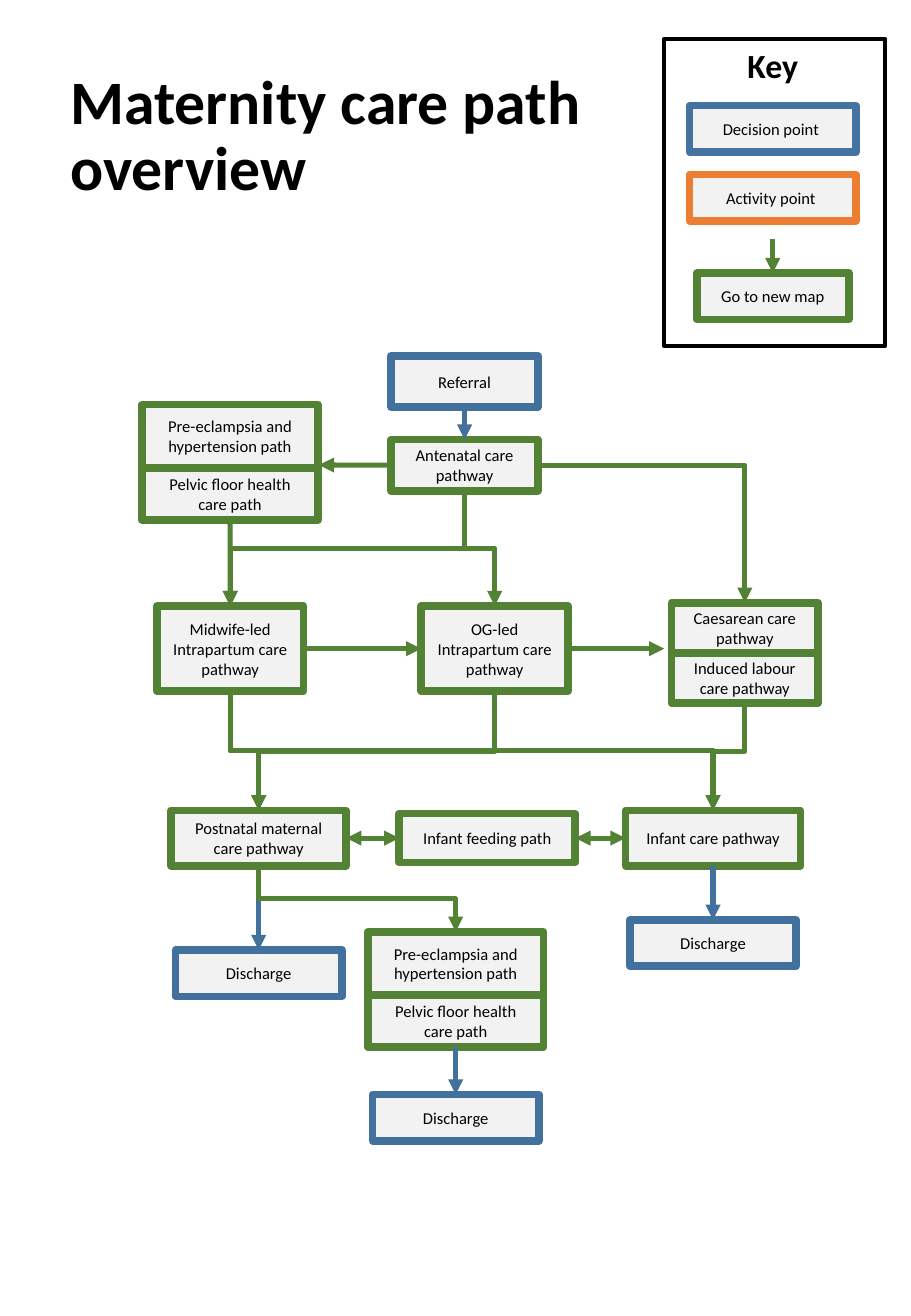
from lxml.etree import SubElement
from pptx import Presentation
from pptx.dml.color import RGBColor
from pptx.enum.shapes import MSO_CONNECTOR, MSO_SHAPE
from pptx.enum.text import MSO_ANCHOR, MSO_AUTO_SIZE, PP_ALIGN
from pptx.oxml.ns import qn
from pptx.util import Cm, Pt

COLOURS = {"decision": "41719C", "key decision": "43739E", "activity": "ED7D31",
           "map": "548235", "fill": "F2F2F2", "ink": "000000"}
TOP, LEFT, BOTTOM, RIGHT = range(4)
HYPERTENSION = "Pre-eclampsia and hypertension path"
PELVIC = "Pelvic floor health care path"

STEPS = {
    "referral": ("Referral", "decision", 5.21, 0, 3.07, 1.07),
    "antenatal": ("Antenatal care pathway", "map", 5.21, 1.75, 3.07, 1.07),
    "hypertension": (HYPERTENSION, "map", 0, 1.02, 3.68, 1.32),
    "pelvic": (PELVIC, "map", 0, 2.34, 3.68, 1.09),
    "midwife": ("Midwife-led Intrapartum care pathway", "map", 0.31, 5.23, 3.07, 1.78),
    "og": ("OG-led Intrapartum care pathway", "map", 5.84, 5.23, 3.07, 1.78),
    "caesarean": ("Caesarean care pathway", "map", 11.07, 5.16, 3.07, 1.05),
    "induced": ("Induced labour care pathway", "map", 11.07, 6.21, 3.07, 1.05),
    "postnatal": ("Postnatal maternal care pathway", "map", 0.61, 9.5, 3.66, 1.16),
    "feeding": ("Infant feeding path", "map", 5.38, 9.57, 3.68, 1.02),
    "infant": ("Infant care pathway", "map", 10.11, 9.5, 3.66, 1.16),
    "late hypertension": (HYPERTENSION, "map", 4.72, 12.04, 3.68, 1.32),
    "late pelvic": (PELVIC, "map", 4.72, 13.36, 3.68, 1.09),
    "infant discharge": ("Discharge", "decision", 10.2, 11.79, 3.48, 0.97),
    "mother discharge": ("Discharge", "decision", 0.7, 12.42, 3.48, 0.97),
    "late discharge": ("Discharge", "decision", 4.82, 15.44, 3.48, 0.97),
}
DOWN_ARROWS = [
    ("referral", "antenatal", "decision"),
    ("infant", "infant discharge", "decision"),
    ("postnatal", "mother discharge", "decision"),
    ("late pelvic", "late discharge", "decision"),
    ("pelvic", "midwife", "map"),
]
DOWN_ELBOWS = [
    ("antenatal", "midwife", 0.5), ("antenatal", "og", 0.5),
    ("midwife", "infant", 0.5), ("midwife", "postnatal", 0.5),
    ("og", "postnatal", 0.51), ("induced", "infant", 0.45),
    ("postnatal", "late hypertension", 0.5),
]


def rgb(name):
    """Return the named colour."""
    return RGBColor.from_string(COLOURS[name])


def format_text(tf, size, bold=False, align=PP_ALIGN.CENTER):
    """Style every run of a text frame."""
    for p in tf.paragraphs:
        p.alignment = align
        for r in p.runs:
            r.font.name, r.font.size, r.font.bold = "Calibri", Pt(size), bold
            r.font.color.rgb = rgb("ink")


def add_box(slide, origin, text, colour, x, y, w, h):
    """Add a bordered step, placed in cm from the origin."""
    sp = slide.shapes.add_shape(MSO_SHAPE.RECTANGLE, Cm(origin[0] + x),
                                Cm(origin[1] + y), Cm(w), Cm(h))
    sp.shadow.inherit = False
    sp.fill.solid()
    sp.fill.fore_color.rgb = rgb("fill")
    sp.line.color.rgb = rgb(colour)
    sp.line.width = Pt(4.5)
    tf = sp.text_frame
    tf.text = text
    tf.word_wrap = True
    tf.vertical_anchor = MSO_ANCHOR.MIDDLE
    format_text(tf, 9.8)
    return sp


def add_arrow(slide, ends=(0, 0, 0, 0), colour="map", kind=MSO_CONNECTOR.STRAIGHT,
              double=False):
    """Add an arrow between two points given in cm."""
    c = slide.shapes.add_connector(kind, *(Cm(v) for v in ends))
    c.line.color.rgb = rgb(colour)
    c.line.width = Pt(3)
    ln = c.line._get_or_add_ln()
    for tag in ("a:headEnd", "a:tailEnd") if double else ("a:tailEnd",):
        SubElement(ln, qn(tag), type="triangle")
    SubElement(c.element.spPr, qn("a:effectLst"))
    return c


def join(slide, start, start_site, end, end_site, **style):
    """Glue an arrow to two steps."""
    c = add_arrow(slide, **style)
    c.begin_connect(start, start_site)
    c.end_connect(end, end_site)
    return c


def join_down(slide, start, end, bend):
    """Glue an elbow that leaves downwards and turns at the given share of its drop."""
    c = join(slide, start, BOTTOM, end, TOP, kind=MSO_CONNECTOR.ELBOW)
    dx, dy = c.end_x - c.begin_x, c.end_y - c.begin_y
    mid_x, mid_y = (c.begin_x + c.end_x) // 2, (c.begin_y + c.end_y) // 2
    xfrm = c.element.spPr.find(qn("a:xfrm"))
    xfrm.attrib.clear()
    xfrm.set("rot", str((270 if dx > 0 else 90) * 60000))
    if dx > 0:
        xfrm.set("flipH", "1")
    c.width, c.height = dy, abs(dx)
    c.left, c.top = mid_x - dy // 2, mid_y - abs(dx) // 2
    geom = c.element.spPr.find(qn("a:prstGeom"))
    SubElement(geom.find(qn("a:avLst")), qn("a:gd"), name="adj1",
               fmla=f"val {round(bend * 100000)}")


def add_title(slide, x, y, w, h):
    """Place and format the slide title."""
    sp = slide.shapes.title
    sp.left, sp.top, sp.width, sp.height = Cm(x), Cm(y), Cm(w), Cm(h)
    tf = sp.text_frame
    tf.text = "Maternity care path\noverview"
    tf.word_wrap = True
    tf.auto_size = MSO_AUTO_SIZE.NONE
    tf.vertical_anchor = MSO_ANCHOR.BOTTOM
    tf.margin_left = tf.margin_right = Cm(0.2)
    tf.margin_top = tf.margin_bottom = Cm(0.1)
    format_text(tf, 36.6, True, PP_ALIGN.LEFT)
    for p in tf.paragraphs:
        p.line_spacing = 0.9
        p.space_before = Pt(0)


def add_key(slide, x, y, w, h):
    """Add the framed key."""
    sp = slide.shapes.add_shape(MSO_SHAPE.RECTANGLE, Cm(x), Cm(y), Cm(w), Cm(h))
    sp.shadow.inherit = False
    sp.fill.background()
    sp.line.color.rgb = rgb("ink")
    sp.line.width = Pt(2.25)
    tb = slide.shapes.add_textbox(Cm(x + 0.53), Cm(y), Cm(3.48), Cm(1.12))
    tb.text_frame.text = "Key"
    tb.text_frame.word_wrap = True
    format_text(tb.text_frame, 20, True)
    add_box(slide, (x, y), "Decision point ", "key decision", 0.53, 1.4, 3.48, 0.97)
    add_box(slide, (x, y), "Activity point ", "activity", 0.53, 2.84, 3.48, 0.97)
    add_box(slide, (x, y), "Go to new map", "map", 0.68, 4.9, 3.18, 0.97)
    add_arrow(slide, (x + 2.27, y + 4.19, x + 2.27, y + 4.9))


def add_pathway(slide, x, y):
    """Add the steps of the care path and the arrows between them."""
    steps = {name: add_box(slide, (x, y), *step) for name, step in STEPS.items()}
    for start, end, colour in DOWN_ARROWS:
        join(slide, steps[start], BOTTOM, steps[end], TOP, colour=colour)
    for start, end, bend in DOWN_ELBOWS:
        join_down(slide, steps[start], steps[end], bend)
    c = join(slide, steps["antenatal"], RIGHT, steps["caesarean"], TOP,
             kind=MSO_CONNECTOR.ELBOW)
    c.element.spPr.find(qn("a:prstGeom")).set("prst", "bentConnector2")
    join(slide, steps["midwife"], RIGHT, steps["og"], LEFT)
    for start, end in (("feeding", "postnatal"), ("infant", "feeding")):
        join(slide, steps[start], LEFT, steps[end], RIGHT, double=True)
    for start, site, ends in (("antenatal", LEFT, (5.21, 2.28, 3.7, 2.28)),
                              ("og", RIGHT, (8.91, 6.12, 10.92, 6.12))):
        x1, y1, x2, y2 = ends
        c = add_arrow(slide, (x + x1, y + y1, x + x2, y + y2))
        c.begin_connect(steps[start], site)


def main():
    """Build the slide and save it."""
    prs = Presentation()
    prs.slide_width, prs.slide_height = Cm(19.05), Cm(27.51)
    slide = prs.slides.add_slide(prs.slide_layouts[5])
    add_title(slide, 1.27, 1.04, 12.09, 3.33)
    add_key(slide, 13.89, 0.81, 4.62, 6.43)
    add_pathway(slide, 2.97, 7.44)
    prs.save("out.pptx")


if __name__ == "__main__":
    main()
